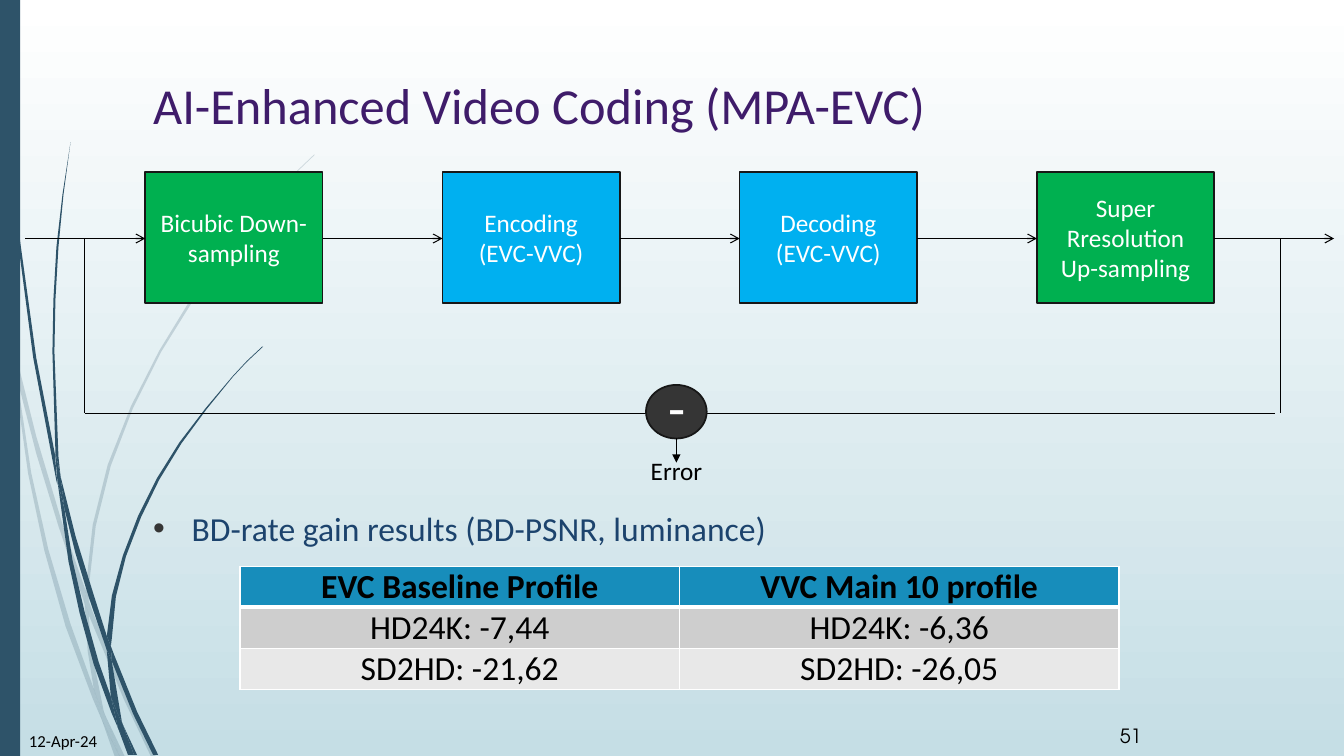
from lxml.etree import SubElement
from pptx import Presentation
from pptx.dml.color import RGBColor
from pptx.enum.shapes import MSO_CONNECTOR as Connector, MSO_SHAPE as Shape
from pptx.enum.text import MSO_ANCHOR as Anchor, MSO_AUTO_SIZE as AutoSize, PP_ALIGN as Align
from pptx.oxml.ns import qn
from pptx.util import Cm, Pt

NAVY = RGBColor(0x2E, 0x53, 0x69)
PALE_BLUE = RGBColor(0xC5, 0xDE, 0xE5)
PURPLE = RGBColor(0x3F, 0x1C, 0x6A)
BODY_BLUE = RGBColor(0x1C, 0x43, 0x6D)
GREEN = RGBColor(0x00, 0xB0, 0x50)
SKY = RGBColor(0x00, 0xB0, 0xF0)
CHARCOAL = RGBColor(0x35, 0x35, 0x35)
OUTLINE = RGBColor(0x17, 0x17, 0x17)
HEADER_BLUE = RGBColor(0x17, 0x8D, 0xBB)
GREY = RGBColor(0xCE, 0xCE, 0xCE)
LIGHT_GREY = RGBColor(0xE8, 0xE8, 0xE8)
WHITE = RGBColor(0xFF, 0xFF, 0xFF)
BLACK = RGBColor(0x00, 0x00, 0x00)

TITLE = "AI-Enhanced Video Coding (MPA-EVC)"
BULLET = "BD-rate gain results (BD-PSNR, luminance)"
STAGES = [
    (["Bicubic Down-sampling"], GREEN),
    (["Encoding", "(EVC-VVC)"], SKY),
    (["Decoding", "(EVC-VVC)"], SKY),
    (["Super Rresolution Up-sampling"], GREEN),
]
RESULTS = [
    ("EVC Baseline Profile", "VVC Main 10 profile"),
    ("HD24K: -7,44", "HD24K: -6,36"),
    ("SD2HD: -21,62", "SD2HD: -26,05"),
]
ROW_FILLS = [HEADER_BLUE, GREY, LIGHT_GREY]
LABELS = [
    ("12-Apr-24", (0.48, 18.29, 2.77, 1.02), dict(size=12)),
    ("51", (27.97, 18.24, 1.55, 0.6), dict(size=14, name="TeX Gyre Adventor", inset=0)),
    ("-", (16.59, 9.27, 0.94, 1.96), dict(size=40, color=WHITE, wrap=False)),
    ("Error", (16.15, 11.35, 1.83, 1.02), dict(size=18, wrap=False)),
]

WISP_UNIT = Cm(0.0254)
PALE_WISPS = [
    [(11, 350), (9, 322), (0, 282), (0, 299), (10, 344)],
    [(58, 522), (84, 599), (85, 586), (62, 520), (36, 433), (14, 345), (17, 376), (36, 450)],
    [(92, 607), (88, 596), (88, 610), (123, 694), (150, 751), (155, 751), (127, 692)],
    [(119, 751), (124, 751), (105, 711)],
    [(93, 683), (70, 619), (48, 545), (31, 469), (17, 376), (11, 350), (28, 470),
     (44, 546), (65, 621), (92, 693), (101, 714), (99, 707)],
    [(84, 599), (87, 646), (93, 683), (96, 692), (105, 711), (103, 706), (91, 646),
     (88, 610), (88, 608)],
    [(88, 584), (95, 522), (110, 462), (132, 405), (160, 349), (193, 296), (229, 245),
     (268, 198), (290, 175), (312, 154), (312, 153), (289, 175), (268, 197), (228, 244),
     (191, 294), (158, 348), (130, 403), (107, 461), (92, 521), (85, 584), (85, 586), (88, 596)],
    [(101, 714), (114, 751), (119, 751)],
    [(88, 608), (88, 610), (88, 596), (85, 586), (84, 599)],
    [(96, 692), (93, 683), (99, 707), (101, 714), (119, 751), (105, 711)],
]
DARK_WISPS = [
    [(7, 110), (17, 233), (33, 355), (56, 477), (57, 481), (55, 457), (55, 453), (36, 355),
     (19, 232), (8, 109), (5, 48), (4, 0), (3, 0), (4, 48)],
    [(88, 592), (106, 645), (106, 633), (106, 631), (93, 590), (75, 532), (60, 472),
     (64, 505), (75, 549)],
    [(113, 649), (110, 641), (111, 656), (132, 708), (152, 749), (157, 749), (136, 706)],
    [(110, 691), (98, 657), (84, 607), (72, 556), (64, 505), (57, 477), (68, 557), (79, 608),
     (93, 659), (111, 708), (117, 722), (116, 717)],
    [(60, 472), (58, 453), (54, 349), (55, 297), (58, 245), (63, 193), (70, 141), (62, 193),
     (56, 245), (53, 297), (52, 349), (55, 449)],
    [(133, 749), (136, 749), (122, 719)],
    [(57, 477), (64, 505), (60, 472), (55, 449), (55, 453)],
    [(111, 633), (115, 592), (125, 552), (140, 513), (158, 476), (180, 440), (205, 406),
     (231, 374), (245, 359), (261, 344), (260, 344), (245, 358), (231, 373), (204, 405),
     (178, 439), (156, 474), (137, 512), (122, 551), (111, 591), (106, 631), (110, 641)],
    [(117, 722), (127, 749), (131, 749)],
    [(106, 645), (110, 691), (116, 706), (122, 719), (121, 716), (111, 656), (109, 651)],
    [(106, 645), (109, 651), (111, 656), (110, 641), (106, 631), (106, 633)],
    [(116, 706), (110, 691), (116, 717), (117, 722), (130, 749), (133, 749), (122, 719)],
]

STAGE_LEFT, STAGE_TOP, STAGE_WIDTH, STAGE_HEIGHT, STAGE_PITCH = 3.66, 4.34, 4.47, 3.3, 7.49
FLOW_GAP = STAGE_PITCH - STAGE_WIDTH
FLOW_Y = 6.01
INPUT_X, OUTPUT_X, ERROR_LINE_END, ERROR_Y = 2.13, 32.28, 32.13, 10.41
NODE_BOX = (16.28, 9.7, 1.53, 1.35)
NODE_X = NODE_BOX[0] + NODE_BOX[2] / 2
ROW_HEIGHT = 1.03


def place(box):
    return [Cm(value) for value in box]


def write(frame, text, size=18, color=BLACK, name="Calibri", bold=False, align=Align.LEFT,
          anchor=Anchor.TOP, wrap=True, inset=0.13):
    frame.auto_size = AutoSize.NONE
    frame.word_wrap = wrap
    frame.vertical_anchor = anchor
    frame.margin_top = frame.margin_bottom = Cm(inset)
    frame.margin_left = frame.margin_right = Cm(0.25)
    write_lines(frame, [text] if isinstance(text, str) else text, size, color, name, bold, align)


def write_lines(frame, lines, size, color, name, bold, align):
    for index, line in enumerate(lines):
        paragraph = frame.add_paragraph() if index else frame.paragraphs[0]
        paragraph.text = line
        paragraph.alignment = align
        paragraph.space_before = Pt(0)
        font = paragraph.runs[0].font
        font.size, font.name, font.bold = Pt(size), name, bold
        font.color.rgb = color


def paint(shape, fill, line=None):
    shape.shadow.inherit = False
    shape.fill.solid()
    shape.fill.fore_color.rgb = fill
    if line is None:
        shape.line.fill.background()
    else:
        shape.line.color.rgb = line
        shape.line.width = Pt(1.25)


def add_wisp(shapes, knots, opacity):
    builder = shapes.build_freeform(*knots[0], scale=float(WISP_UNIT))
    builder.add_line_segments(knots[1:], close=True)
    shape = builder.convert_to_shape()
    paint(shape, NAVY)
    if opacity < 100:
        color = shape._element.spPr.find(qn("a:solidFill"))[0]
        SubElement(color, qn("a:alpha"), val=str(opacity * 1000))


def add_line(shapes, start, end, head=None):
    line = shapes.add_connector(Connector.STRAIGHT, *place(start + end))
    line.line.color.rgb = BLACK
    line.line.width = Pt(0.75)
    if head:
        SubElement(line.line._get_or_add_ln(), qn("a:tailEnd"), type=head)
    SubElement(line._element.spPr, qn("a:effectLst"))


def set_borders(cell, header):
    properties = cell._tc.get_or_add_tcPr()
    for index, side in enumerate(("lnL", "lnR", "lnT", "lnB")):
        width = Pt(3) if header and side == "lnB" else Pt(1)
        border = properties.makeelement(qn("a:" + side), {"w": str(width)})
        fill = SubElement(border, qn("a:solidFill"))
        SubElement(fill, qn("a:srgbClr"), val=str(WHITE))
        properties.insert(index, border)


def add_results(shapes):
    box = (6.05, 14.27, 22.15, ROW_HEIGHT * len(RESULTS))
    table = shapes.add_table(len(RESULTS), 2, *place(box)).table
    for row_index, row in enumerate(RESULTS):
        table.rows[row_index].height = Cm(ROW_HEIGHT)
        for column_index, text in enumerate(row):
            cell = table.cell(row_index, column_index)
            cell.margin_left = cell.margin_right = Cm(0.18)
            cell.margin_top = cell.margin_bottom = 0
            write_lines(cell.text_frame, [text], 24, BLACK, "Calibri", row_index == 0, Align.CENTER)
            cell.fill.solid()
            cell.fill.fore_color.rgb = ROW_FILLS[row_index]
            set_borders(cell, row_index == 0)


def add_heading_and_bullet(slide):
    title, body = slide.shapes.title, slide.placeholders[1]
    title.left, title.top, title.width, title.height = place((3.61, 1.73, 28.35, 2.29))
    write(title.text_frame, TITLE, size=36, color=PURPLE)
    body.left, body.top, body.width, body.height = place((3.61, 12.67, 28.35, 1.6))
    properties = body.text_frame.paragraphs[0]._p.get_or_add_pPr()
    properties.set("marL", str(Cm(0.97)))
    properties.set("indent", str(-Cm(0.97)))
    bullet_color = SubElement(properties, qn("a:buClr"))
    SubElement(bullet_color, qn("a:srgbClr"), val=str(CHARCOAL))
    SubElement(properties, qn("a:buFont"), typeface="Arial")
    SubElement(properties, qn("a:buChar"), char="•")
    write(body.text_frame, BULLET, size=24, color=BODY_BLUE)


def main():
    presentation = Presentation()
    presentation.slide_width, presentation.slide_height = Cm(33.87), Cm(19.05)
    slide = presentation.slides.add_slide(presentation.slide_layouts[1])
    shapes = slide.shapes
    background = slide.background.fill
    background.gradient()
    background.gradient_angle = 270
    for stop, color, position in zip(background.gradient_stops, (WHITE, PALE_BLUE), (0, 1)):
        stop.color.rgb = color
        stop.position = position
    for wisps, opacity in ((PALE_WISPS, 20), (DARK_WISPS, 100)):
        for knots in wisps:
            add_wisp(shapes, knots, opacity)
    paint(shapes.add_shape(Shape.RECTANGLE, *place((0, 0, 0.51, 19.05))), NAVY)
    add_heading_and_bullet(slide)
    for index, (lines, fill) in enumerate(STAGES):
        box = (STAGE_LEFT + index * STAGE_PITCH, STAGE_TOP, STAGE_WIDTH, STAGE_HEIGHT)
        stage = shapes.add_shape(Shape.RECTANGLE, *place(box))
        paint(stage, fill, OUTLINE)
        write(stage.text_frame, lines, color=WHITE, align=Align.CENTER, anchor=Anchor.MIDDLE)
    for index in range(len(STAGES) + 1):
        end = STAGE_LEFT + index * STAGE_PITCH
        add_line(shapes, (end - FLOW_GAP, FLOW_Y), (end, FLOW_Y), "arrow")
    for tap_x in (INPUT_X, OUTPUT_X):
        add_line(shapes, (tap_x, FLOW_Y), (tap_x, ERROR_Y))
    add_line(shapes, (INPUT_X, ERROR_Y), (ERROR_LINE_END, ERROR_Y))
    paint(shapes.add_shape(Shape.OVAL, *place(NODE_BOX)), CHARCOAL, OUTLINE)
    add_line(shapes, (NODE_X, NODE_BOX[1] + NODE_BOX[3]), (NODE_X, 11.66), "triangle")
    for text, box, style in LABELS:
        write(shapes.add_textbox(*place(box)).text_frame, text, **style)
    add_results(shapes)
    presentation.save("out.pptx")


if __name__ == "__main__":
    main()
